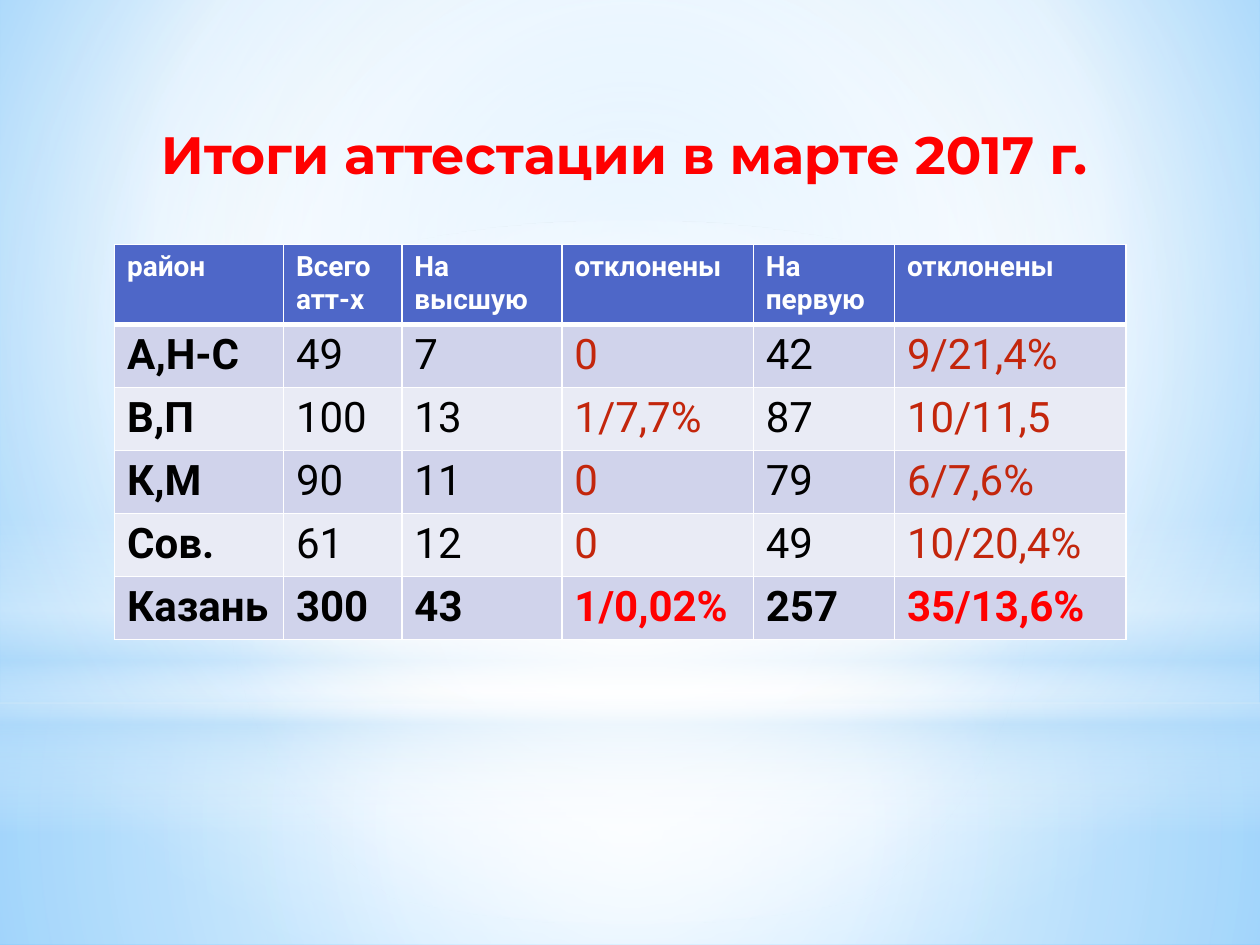
from lxml.etree import SubElement
from pptx import Presentation
from pptx.dml.color import RGBColor
from pptx.enum.shapes import MSO_SHAPE
from pptx.enum.text import PP_ALIGN
from pptx.oxml import parse_xml
from pptx.oxml.ns import nsdecls, qn
from pptx.util import Inches, Pt

COLORS = {
    "white": "FFFFFF", "black": "000000", "sky": "9ED5FF", "azure": "5BB9FF",
    "haze": "B4DCFA", "header": "4E67C8", "odd": "D0D3EB", "even": "E9EBF5",
    "rejected": "C3260C", "red": "FF0000",
}


def set_gradient(properties, stops, center=None):
    gradient = parse_xml(f'<a:gradFill rotWithShape="1" {nsdecls("a")}/>')
    stop_list = SubElement(gradient, qn("a:gsLst"))
    for position, color, opacity in stops:
        stop = SubElement(stop_list, qn("a:gs"), pos=str(position * 1000))
        fill = SubElement(stop, qn("a:srgbClr"), val=COLORS[color])
        if opacity < 100:
            SubElement(fill, qn("a:alpha"), val=str(opacity * 1000))
    if center:
        circle = SubElement(gradient, qn("a:path"), {"path": "circle"})
        sides = {side: str(share * 1000) for side, share in zip("ltrb", center)}
        SubElement(circle, qn("a:fillToRect"), sides)
    else:
        SubElement(gradient, qn("a:lin"), ang="5400000", scaled="0")
    properties.replace(properties.find(qn("a:noFill")), gradient)


def format_run(run, color, **values):
    for name, value in values.items():
        setattr(run.font, name, value)
    run.font.color.rgb = RGBColor.from_string(COLORS[color])


presentation = Presentation()
presentation.slide_width, presentation.slide_height = Inches(10), Inches(7.5)
column = presentation.slide_width / 10
row = presentation.slide_height / 7.5
slide = presentation.slides.add_slide(presentation.slide_layouts[6])

slide.background.fill.background()
set_gradient(slide.element.find(".//" + qn("p:bgPr")),
             [(0, "sky", 100), (60, "white", 100), (100, "azure", 100)],
             (20, 10, 20, 60))

middle = (50, 50, 50, 50)
backdrop = [
    (MSO_SHAPE.RECTANGLE, 5.58, 1.92,
     [(0, "white", 91), (37, "white", 76), (100, "haze", 79)], middle),
    (MSO_SHAPE.RECTANGLE, 0, 5.58,
     [(0, "white", 89), (48, "white", 62), (100, "haze", 79)], middle),
    (MSO_SHAPE.RECTANGLE, 4.12, 2.5,
     [(0, "white", 0), (29, "white", 30), (45, "haze", 40),
      (55, "white", 26), (65, "haze", 60), (100, "white", 0)], None),
    (MSO_SHAPE.OVAL, 1.75, 5.58, [(0, "white", 100), (56, "white", 0)], middle),
]
for kind, top, height, stops, center in backdrop:
    shape = slide.shapes.add_shape(kind, 0, int(top * row),
                                   presentation.slide_width, int(height * row))
    shape.shadow.inherit = False
    shape.line.fill.background()
    shape.fill.background()
    set_gradient(shape.element.spPr, stops, center)

title = slide.shapes.add_textbox(int(0.43 * column), int(0.92 * row),
                                 int(9 * column), int(4.95 * row))
title.text_frame.word_wrap = True
paragraph = title.text_frame.paragraphs[0]
paragraph_format = {"alignment": PP_ALIGN.CENTER, "space_before": Pt(2.4),
                    "space_after": Pt(3)}
for name, value in paragraph_format.items():
    setattr(paragraph, name, value)
paragraph._p.get_or_add_pPr().set("marL", str(int(0.05 * column)))
run = paragraph.add_run()
run.text = "Итоги аттестации в марте 2017 г."
format_run(run, "red", name="Montserrat", size=Pt(30), bold=True)

results = [
    ["район", "Всего атт-х", "На высшую", "отклонены", "На первую", "отклонены"],
    ["А,Н-С", "49", "7", "0", "42", "9/21,4%"],
    ["В,П", "100", "13", "1/7,7%", "87", "10/11,5"],
    ["К,М", "90", "11", "0", "79", "6/7,6%"],
    ["Сов.", "61", "12", "0", "49", "10/20,4%"],
    ["Казань", "300", "43", "1/0,02%", "257", "35/13,6%"],
]
widths = [1.34, 0.94, 1.27, 1.52, 1.12, 1.84]
heights = [0.61] + [0.49] * 5
total_row = len(results) - 1
rejected_columns = (3, 5)

table = slide.shapes.add_table(
    len(results), len(widths), int(0.91 * column), int(1.94 * row),
    int(sum(widths) * column), int(sum(heights) * row)).table
for table_column, width in zip(table.columns, widths):
    table_column.width = int(width * column)
for table_row, height in zip(table.rows, heights):
    table_row.height = int(height * row)

for row_index, texts in enumerate(results):
    for column_index, text in enumerate(texts):
        header, total = row_index == 0, row_index == total_row
        if header:
            fill, color = "header", "white"
        else:
            fill, color = "odd" if row_index % 2 else "even", "black"
            if column_index in rejected_columns:
                color = "red" if total else "rejected"
        cell = table.cell(row_index, column_index)
        cell.fill.solid()
        cell.fill.fore_color.rgb = RGBColor.from_string(COLORS[fill])
        run = cell.text_frame.paragraphs[0].add_run()
        run.text = text
        format_run(run, color, name="Roboto", size=Pt(16 if header else 24),
                   bold=header or total or column_index == 0)

        properties = cell._tc.get_or_add_tcPr()
        for order, side in enumerate("LRTB"):
            thick = (row_index, side) in ((0, "B"), (1, "T"))
            border = parse_xml(
                f'<a:ln{side} {nsdecls("a")} w="{Pt(3 if thick else 1)}"><a:solidFill>'
                f'<a:srgbClr val="{COLORS["white"]}"/></a:solidFill></a:ln{side}>')
            properties.insert(order, border)

presentation.save("out.pptx")
